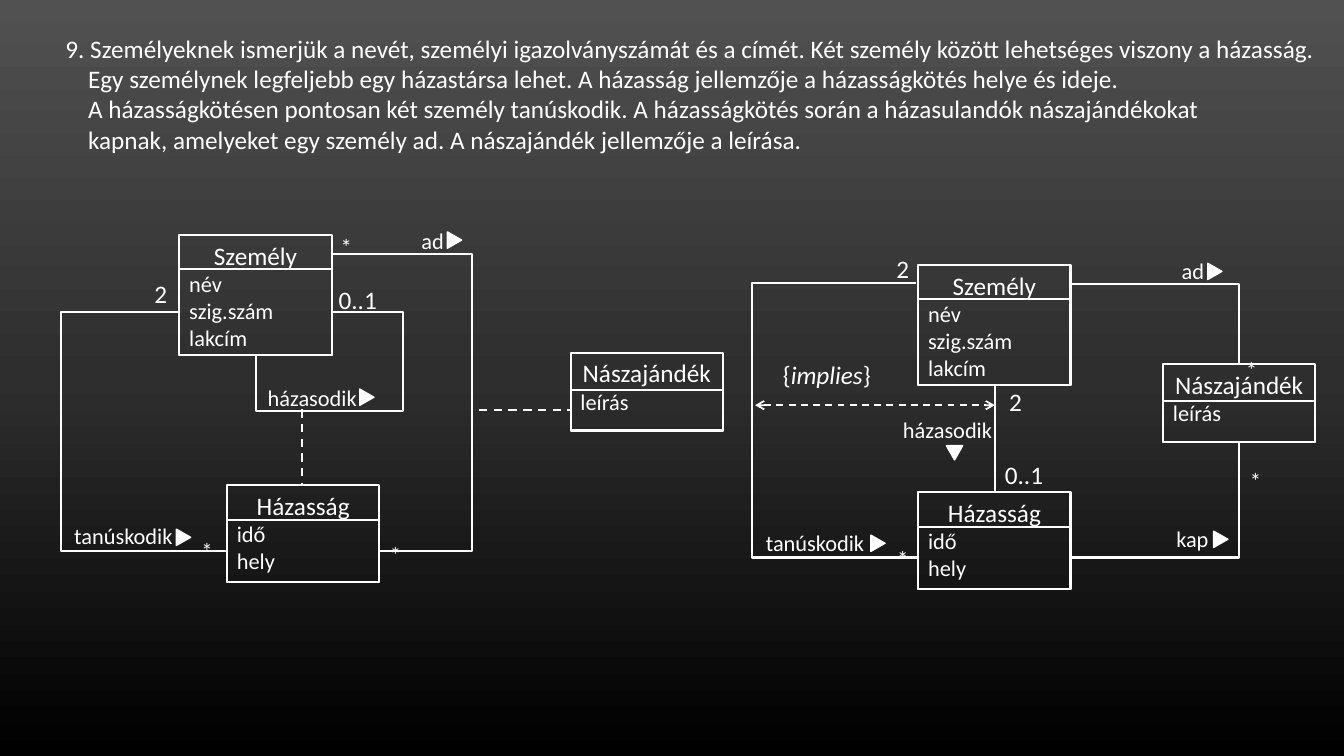
from copy import deepcopy
from lxml import etree
from pptx import Presentation
from pptx.dml.color import RGBColor
from pptx.enum.dml import MSO_LINE
from pptx.enum.shapes import MSO_CONNECTOR, MSO_SHAPE
from pptx.enum.text import MSO_ANCHOR, PP_ALIGN
from pptx.oxml.ns import qn
from pptx.util import Cm, Pt

RECT, TRI = MSO_SHAPE.RECTANGLE, MSO_SHAPE.ISOSCELES_TRIANGLE
STRAIGHT, ELBOW = MSO_CONNECTOR.STRAIGHT, MSO_CONNECTOR.ELBOW
LEFT, MID, TOP = PP_ALIGN.LEFT, PP_ALIGN.CENTER, MSO_ANCHOR.TOP
DASH = MSO_LINE.DASH
WHITE = "FFFFFF"
CLASS_W = 3.84
TASK = [
    "9. Személyeknek ismerjük a nevét, személyi igazolványszámát és a címét. "
    "Két személy között lehetséges viszony a házasság.",
    "Egy személynek legfeljebb egy házastársa lehet. "
    "A házasság jellemzője a házasságkötés helye és ideje.",
    "A házasságkötésen pontosan két személy tanúskodik. "
    "A házasságkötés során a házasulandók nászajándékokat",
    "kapnak, amelyeket egy személy ad. A nászajándék jellemzője a leírása.",
]
# Name, attributes, height of the box and of its head
PERSON = ("Személy", ["név", "szig.szám", "lakcím"], 3.02, 0.86)
WEDDING = ("Házasság", ["idő", "hely"], 2.44, 0.88)
GIFT = ("Nászajándék", ["leírás"], 1.96, 0.94)
# Label widths; labels of 16 pt are words, the others multiplicities
WIDTHS = {"tanúskodik": 3.02, "házasodik": 2.84, "ad": 1.09, "kap": 1.32,
          "0..1": 1.47, "2": 0.84, "*": 0.84}
SIZES = {"0..1": 18, "2": 18, "*": 28}


def color(code):
    return RGBColor.from_string(code)


def write(par, text, size=18, align=MID, italic=False, base=0):
    par.alignment = align
    run = par.add_run()
    run.text = text
    font = run.font
    font.name, font.size, font.italic = "Calibri", Pt(size), italic
    font.color.rgb = color(WHITE)
    if base:
        run._r.get_or_add_rPr().set("baseline", str(base * 1000))


def block(slide, kind, x, y, w, h, width=1.5, fill=None):
    shape = slide.shapes.add_shape(kind, Cm(x), Cm(y), Cm(w), Cm(h))
    shape.shadow.inherit = False
    shape.line.color.rgb = color(WHITE)
    shape.line.width = Pt(width)
    if fill:
        shape.fill.solid()
        shape.fill.fore_color.rgb = color(fill)
    else:
        shape.fill.background()
    return shape


def frame(slide, x, y, w, h):
    box = slide.shapes.add_textbox(Cm(x), Cm(y), Cm(w), Cm(h))
    box.text_frame.word_wrap = False
    return box.text_frame


def entity(slide, x, y, spec):
    name, attrs, h, head = spec
    text = block(slide, RECT, x, y, CLASS_W, h).text_frame
    text.vertical_anchor = TOP
    write(text.paragraphs[0], name)
    for attr in attrs:
        write(text.add_paragraph(), attr, size=16, align=LEFT)
    block(slide, RECT, x, y + head, CLASS_W, h - head)


def label(slide, x, y, text):
    size = SIZES.get(text, 16)
    text_box = frame(slide, x, y, WIDTHS[text], 1)
    write(text_box.paragraphs[0], text, size=size, base=-10 if text == "*" else 0)


def marker(slide, x, y, turn=90):
    block(slide, TRI, x, y, 0.41, 0.36, width=1, fill=WHITE).rotation = turn


def line(slide, start, end, kind=STRAIGHT, width=1.5, dash=None):
    link = slide.shapes.add_connector(kind, *map(Cm, start + end))
    link.line.color.rgb = color(WHITE)
    link.line.width = Pt(width)
    if dash:
        link.line.dash_style = dash
    etree.SubElement(link._element.spPr, qn("a:effectLst"))
    return link


def bend(slide, start, end, *via):
    """Elbow that leaves sideways; via gives the x, then the y, of its detour."""
    link = line(slide, start, end, kind=ELBOW)
    geom = link._element.spPr.find(qn("a:prstGeom"))
    geom.set("prst", f"bentConnector{len(via) + 2}")
    guides = geom.find(qn("a:avLst"))
    for i, (a, b, stop) in enumerate(zip(start, end, via), 1):
        ratio = round((stop - a) / (b - a) * 100000)
        etree.SubElement(guides, qn("a:gd"), name=f"adj{i}", fmla=f"val {ratio}")


def backdrop(slide):
    fill = slide.background.fill
    fill.gradient()
    fill.gradient_angle = 270
    stops = fill.gradient_stops[0]._gs.getparent()
    stops.append(deepcopy(stops[-1]))
    for stop, place, code in zip(fill.gradient_stops, (0, 0.5, 1),
                                 ("515151", "2E2E2E", "000000")):
        stop.position = place
        stop.color.rgb = color(code)


def task(slide, x, y, w, h):
    text = frame(slide, x, y, w, h)
    for i, row in enumerate(TASK):
        par = text.add_paragraph() if i else text.paragraphs[0]
        write(par, row, align=LEFT)
        if i:
            par._p.get_or_add_pPr().set("marL", str(Cm(0.57)))


def first(slide, x, y):
    """Model with the wedding as an association class."""
    def at(dx, dy):
        return x + dx, y + dy

    # Classes
    entity(slide, *at(2.97, 0.69), PERSON)
    entity(slide, *at(4.17, 6.99), WEDDING)
    entity(slide, *at(12.83, 3.66), GIFT)
    # Associations
    bend(slide, at(4.17, 8.66), at(2.97, 2.64), x)
    bend(slide, at(8, 8.66), at(6.81, 1.17), x + 10.34)
    bend(slide, at(6.81, 2.64), at(4.9, 3.71), x + 8.61, y + 5.13)
    line(slide, at(6.07, 5.08), at(6.07, 6.99), dash=DASH)
    line(slide, at(10.52, 5.11), at(12.83, 5.11), dash=DASH)
    # Labels and reading directions
    for dx, dy, text in [(2.08, 1.65, "2"), (0.05, 7.8, "tanúskodik"),
                         (3.25, 7.67, "*"), (4.9, 4.32, "házasodik"),
                         (6.76, 0, "*"), (6.73, 1.8, "0..1"),
                         (8, 7.75, "*"), (8.81, 0.36, "ad")]:
        label(slide, *at(dx, dy), text)
    for spot in [(2.87, 8.13), (7.49, 4.6), (9.7, 0.64)]:
        marker(slide, *at(*spot))


def second(slide, x, y):
    """Model with the wedding as a class of its own."""
    def at(dx, dy):
        return x + dx, y + dy

    # Classes
    entity(slide, *at(4.19, 0.43), PERSON)
    entity(slide, *at(4.19, 6.15), WEDDING)
    entity(slide, *at(10.36, 2.92), GIFT)
    # Associations
    bend(slide, at(4.19, 7.8), at(4.14, 0.89), x)
    bend(slide, at(8.05, 0.91), at(12.27, 2.92))
    bend(slide, at(8.03, 7.8), at(12.27, 4.88))
    line(slide, at(6.12, 3.45), at(6.12, 6.15))
    # Labels and reading directions
    for dx, dy, text in [(3.38, 0, "2"), (0.08, 6.96, "tanúskodik"),
                         (10.57, 0.1, "ad"), (3.38, 6.83, "*"),
                         (3.51, 4.11, "házasodik"), (6.22, 3.35, "2"),
                         (10.44, 6.86, "kap"), (12.27, 4.88, "*"),
                         (12.17, 2.08, "*"), (6.12, 5.21, "0..1")]:
        label(slide, *at(dx, dy), text)
    for spot in [(2.97, 7.26), (4.9, 4.98, 180), (11.46, 0.41), (11.61, 7.16)]:
        marker(slide, *at(*spot[:2]), *spot[2:])
    # Constraint between two associations
    arrow = line(slide, at(0.08, 3.96), at(6.12, 3.96), width=1.25, dash=DASH)
    for end in ("a:headEnd", "a:tailEnd"):
        etree.SubElement(arrow.line._get_or_add_ln(), qn(end), type="arrow")
    par = frame(slide, *at(0.53, 2.69), 3.02, 1.02).paragraphs[0]
    for part in ("{", "implies", "}"):
        write(par, part, align=LEFT, italic=part == "implies")


def main():
    deck = Presentation()
    deck.slide_width, deck.slide_height = Cm(33.87), Cm(19.05)
    slide = deck.slides.add_slide(deck.slide_layouts[6])
    backdrop(slide)
    first(slide, 1.55, 5.23)
    second(slide, 18.95, 6.25)
    task(slide, 1.4, 0.71, 32.49, 3.33)
    deck.save("out.pptx")


if __name__ == "__main__":
    main()
